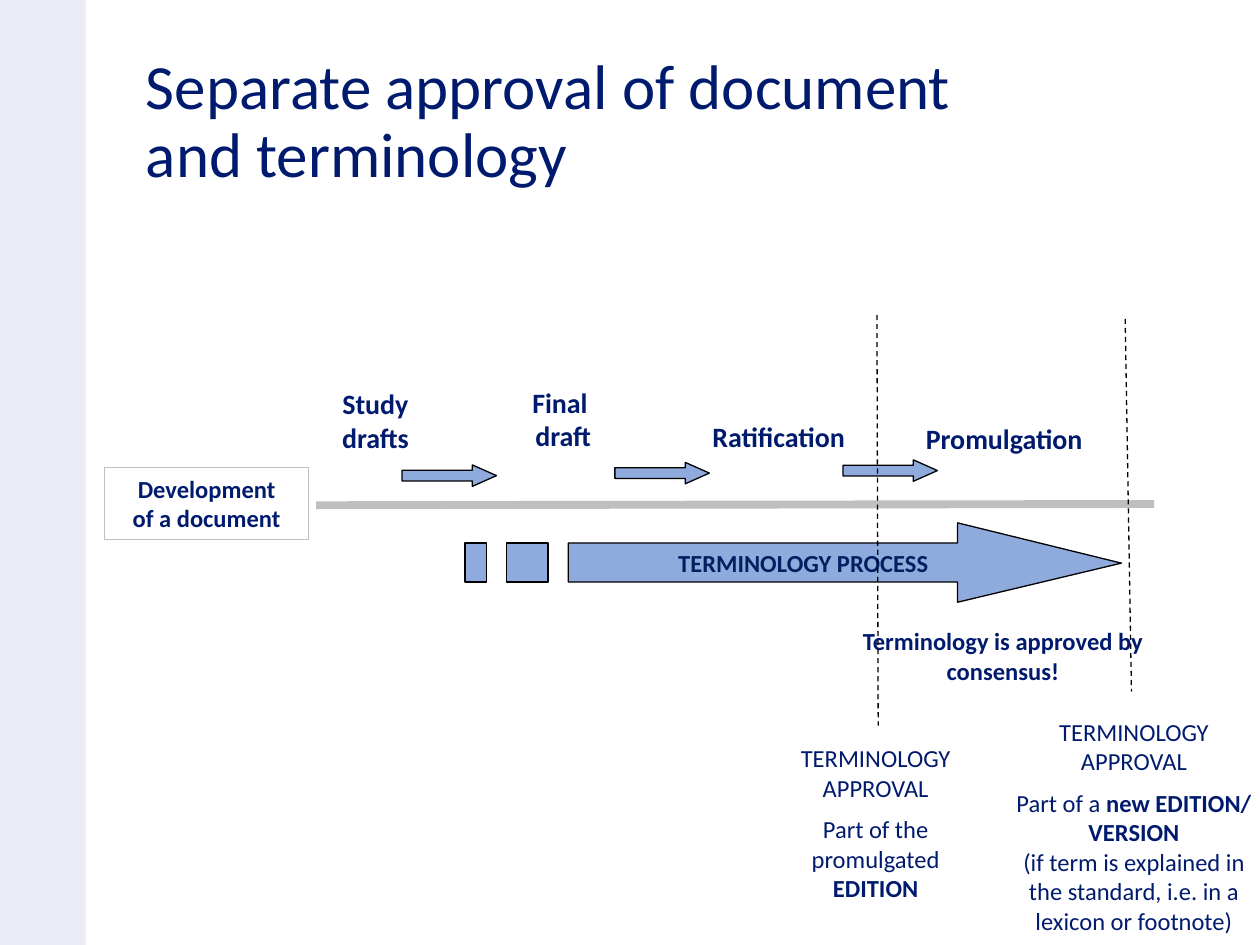
from lxml import etree
from pptx import Presentation
from pptx.dml.color import RGBColor
from pptx.enum.dml import MSO_LINE
from pptx.enum.shapes import MSO_CONNECTOR, MSO_SHAPE
from pptx.enum.text import MSO_ANCHOR, PP_ALIGN
from pptx.oxml.ns import qn
from pptx.util import Inches, Pt

RECTANGLE, ARROW = MSO_SHAPE.RECTANGLE, MSO_SHAPE.RIGHT_ARROW
STRAIGHT, DASH = MSO_CONNECTOR.STRAIGHT, MSO_LINE.DASH
CENTER, LEFT, MIDDLE = PP_ALIGN.CENTER, PP_ALIGN.LEFT, MSO_ANCHOR.MIDDLE
FONT = "Calibri"
COLORS = {"navy": "001A6E", "process": "002060", "blue": "8FAADC",
          "pale": "EAEDF6", "gray": "BFBFBF", "black": "000000"}

# Content: a paragraph is a list of (text, bold) runs, "\n" breaks a line
TITLE = [[("Separate approval of document and terminology", False)]]
DEVELOPMENT = [[("Development", True)], [("of a document", True)]]
PROCESS = [[("TERMINOLOGY PROCESS", True)]]
STAGES = [  # left, top, width, height, paragraphs
    (2.51, 3.02, 0.94, 0.64, [[("Study drafts", True)]]),
    (3.74, 3.01, 1.46, 0.64, [[("Final ", True)], [("draft", True)]]),
    (5.46, 3.28, 1.44, 0.37, [[("Ratification", True)]]),
    (7.15, 3.30, 1.64, 0.37, [[("Promulgation", True)]]),
]
APPROVAL_HEADING = [("TERMINOLOGY APPROVAL", False)]
NOTES = [
    (6.69, 4.92, 2.54, 0.57, [[("Terminology is approved by consensus!", True)]]),
    (6.18, 5.85, 1.54, 1.40, [
        APPROVAL_HEADING,
        [("Part of the promulgated ", False), ("EDITION", True)]]),
    (7.96, 5.64, 2.08, 1.86, [
        APPROVAL_HEADING,
        [("Part of a ", False), ("new EDITION/\nVERSION\n", True),
         ("(if term is explained in the standard, i.e. in a lexicon or footnote)",
          False)]]),
]
STAGE_ARROWS = [(3.19, 3.69), (4.88, 3.67), (6.69, 3.65)]
LINES = [  # start, end, color, width, dashed
    ((2.51, 4.01), (9.16, 4.00), "gray", 4.5, False),
    ((6.96, 2.50), (6.97, 5.76), "black", 0.75, True),
    ((8.93, 2.53), (8.98, 5.49), "black", 0.75, True),
]
# Process arrow: outer rows, shaft rows, and columns of shaft, head and stripes
HEAD_TOP, SHAFT_TOP, TIP_Y, SHAFT_BOTTOM, HEAD_BOTTOM = 4.15, 4.31, 4.47, 4.62, 4.78
SHAFT_LEFT, HEAD_LEFT, TIP_X = 4.51, 7.60, 8.90
STRIPES = [(4.02, 4.35), (3.69, 3.86)]


def rgb(name):
    return RGBColor.from_string(COLORS[name])


def write(shape, paragraphs, size, color="navy", align=CENTER, before=0, spacing=None):
    frame = shape.text_frame
    frame.word_wrap = True
    for index, runs in enumerate(paragraphs):
        paragraph = frame.paragraphs[0] if index == 0 else frame.add_paragraph()
        paragraph.alignment = align
        if index and before:
            paragraph.space_before = Pt(before)
        if spacing:
            paragraph.line_spacing = spacing
        paragraph.font.name, paragraph.font.size = FONT, Pt(size)
        paragraph.font.color.rgb = rgb(color)
        for text, bold in runs:
            for number, part in enumerate(text.split("\n")):
                if number:
                    paragraph.add_line_break()
                if part:
                    run = paragraph.add_run()
                    run.text = part
                    run.font.bold = bold
    return frame


def style(shape, fill=None, line=None):
    shape.shadow.inherit = False
    if fill:
        shape.fill.solid()
        shape.fill.fore_color.rgb = rgb(fill)
    else:
        shape.fill.background()
    if line:
        shape.line.color.rgb = rgb(line)
        shape.line.width = Pt(0.75)
    else:
        shape.line.fill.background()
    return shape


presentation = Presentation()
presentation.slide_width, presentation.slide_height = Inches(10), Inches(7.5)
slide = presentation.slides.add_slide(presentation.slide_layouts[6])
shapes = slide.shapes


def add_box(kind, *place):
    return shapes.add_shape(kind, *map(Inches, place))


def add_text(place, paragraphs, size, **options):
    write(shapes.add_textbox(*map(Inches, place)), paragraphs, size, **options)


# Side band and title
style(add_box(RECTANGLE, 0, 0, 0.68, 7.5), fill="pale")
add_text((1.06, 0.39, 6.76, 1.31), TITLE, 36, align=LEFT, spacing=0.9)

# Development stages
development = style(add_box(RECTANGLE, 0.83, 3.71, 1.62, 0.57), line="gray")
write(development, DEVELOPMENT, 14)
for *place, paragraphs in STAGES:
    add_text(place, paragraphs, 16)
for left, top in STAGE_ARROWS:
    arrow = style(add_box(ARROW, left, top, 0.75, 0.17), "blue", "black")
    arrow.adjustments[1] = 1.125

# Striped process arrow, drawn in whole EMU because the builder rounds its points
outlines = [[(HEAD_LEFT, HEAD_TOP), (HEAD_LEFT, SHAFT_TOP), (SHAFT_LEFT, SHAFT_TOP),
             (SHAFT_LEFT, SHAFT_BOTTOM), (HEAD_LEFT, SHAFT_BOTTOM),
             (HEAD_LEFT, HEAD_BOTTOM), (TIP_X, TIP_Y)]]
outlines += [[(left, SHAFT_TOP), (left, SHAFT_BOTTOM),
              (right, SHAFT_BOTTOM), (right, SHAFT_TOP)] for left, right in STRIPES]
outlines = [[(Inches(x), Inches(y)) for x, y in outline] for outline in outlines]
builder = shapes.build_freeform(*outlines[0][0])
for index, (start, *points) in enumerate(outlines):
    if index:
        builder.move_to(*start)
    builder.add_line_segments(points, close=True)
process = style(builder.convert_to_shape(), "blue", "black")
frame = write(process, PROCESS, 14, color="process")
frame.word_wrap = False
frame.vertical_anchor = MIDDLE
frame.margin_left = Inches(0.26)

# Approval notes
for *place, paragraphs in NOTES:
    add_text(place, paragraphs, 14, before=7)

# Timeline and approval dates
for start, end, color, width, dashed in LINES:
    line = shapes.add_connector(STRAIGHT, *map(Inches, start + end))
    line.line.color.rgb = rgb(color)
    line.line.width = Pt(width)
    if dashed:
        line.line.dash_style = DASH
    etree.SubElement(line._element.spPr, qn("a:effectLst"))

presentation.save("out.pptx")
